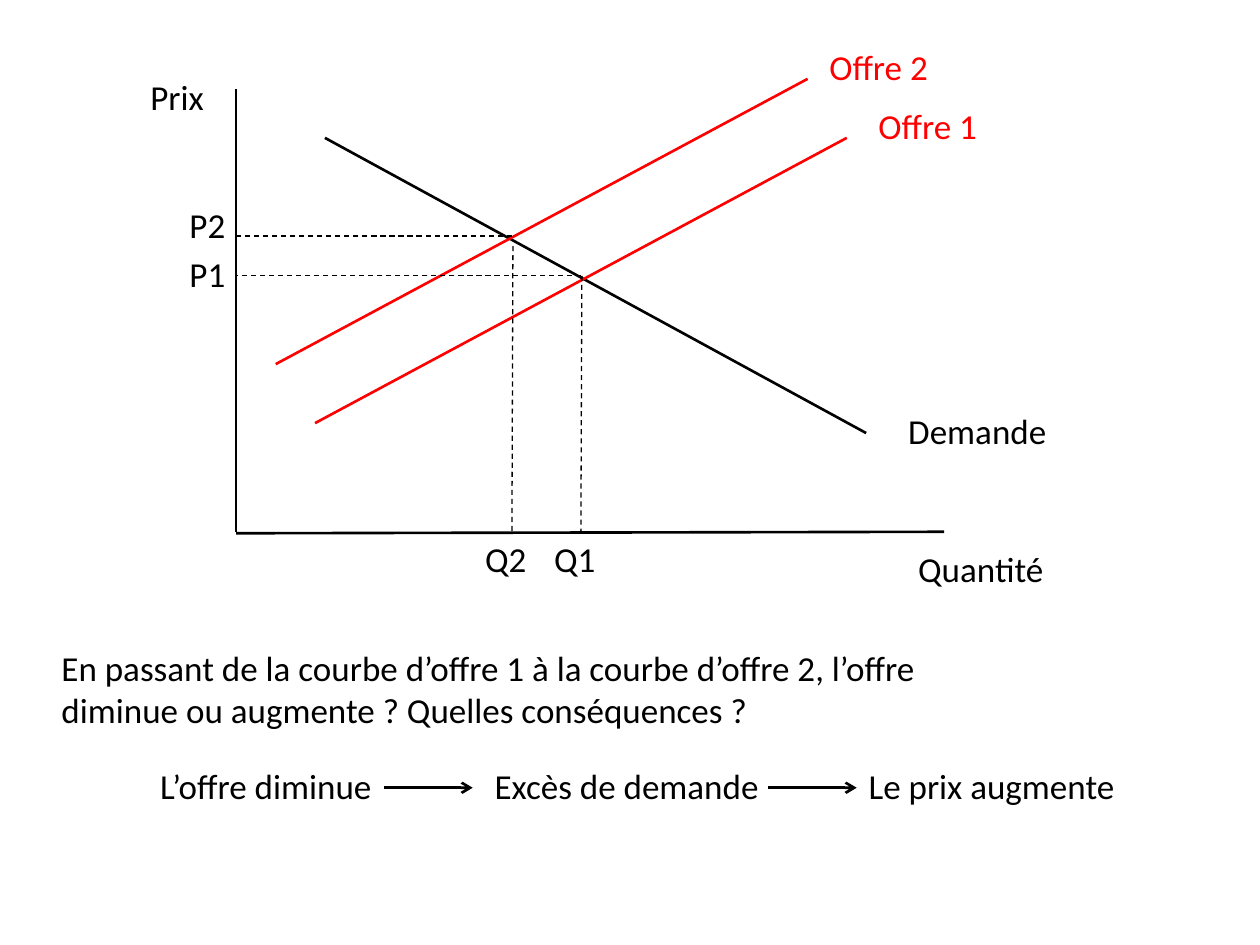
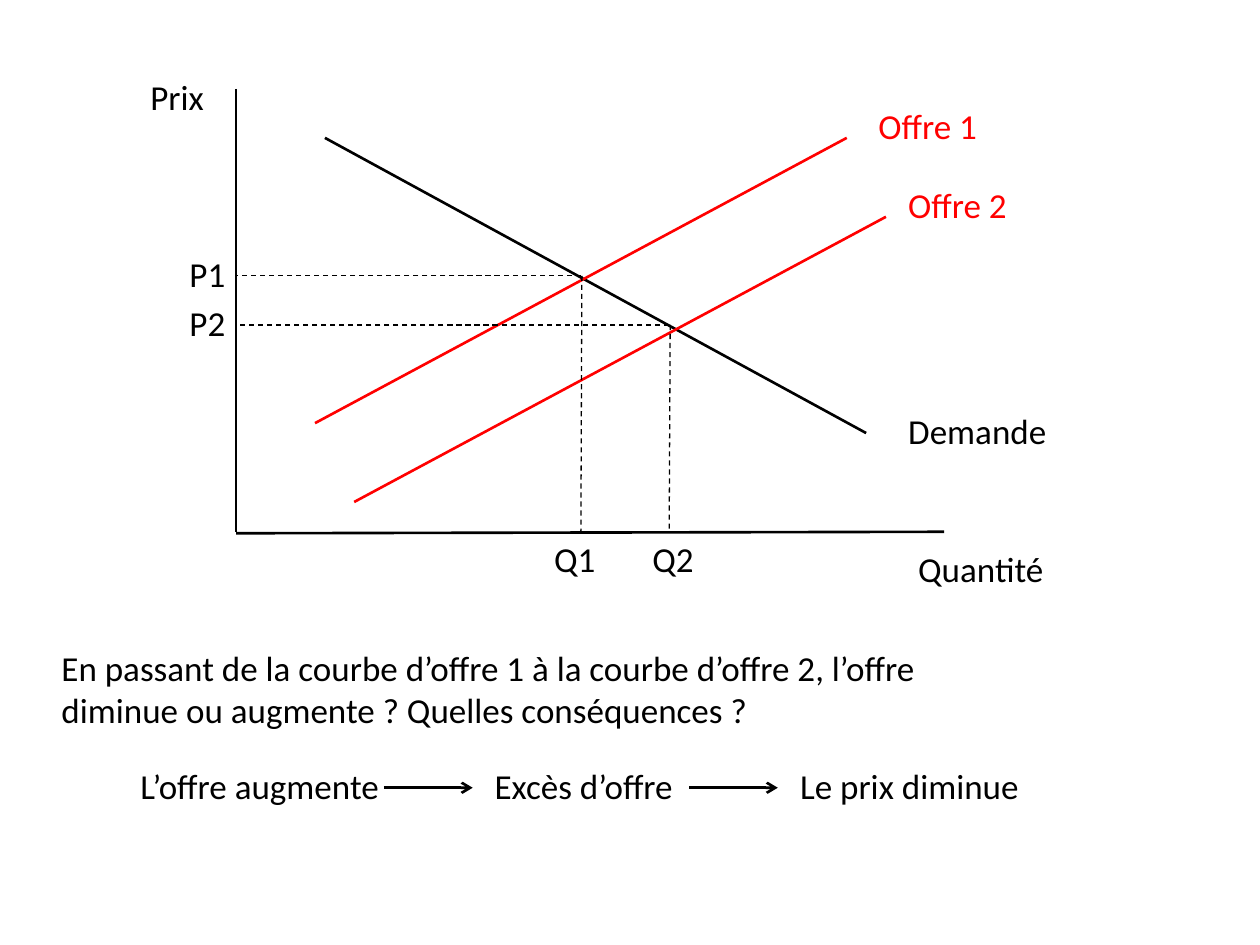
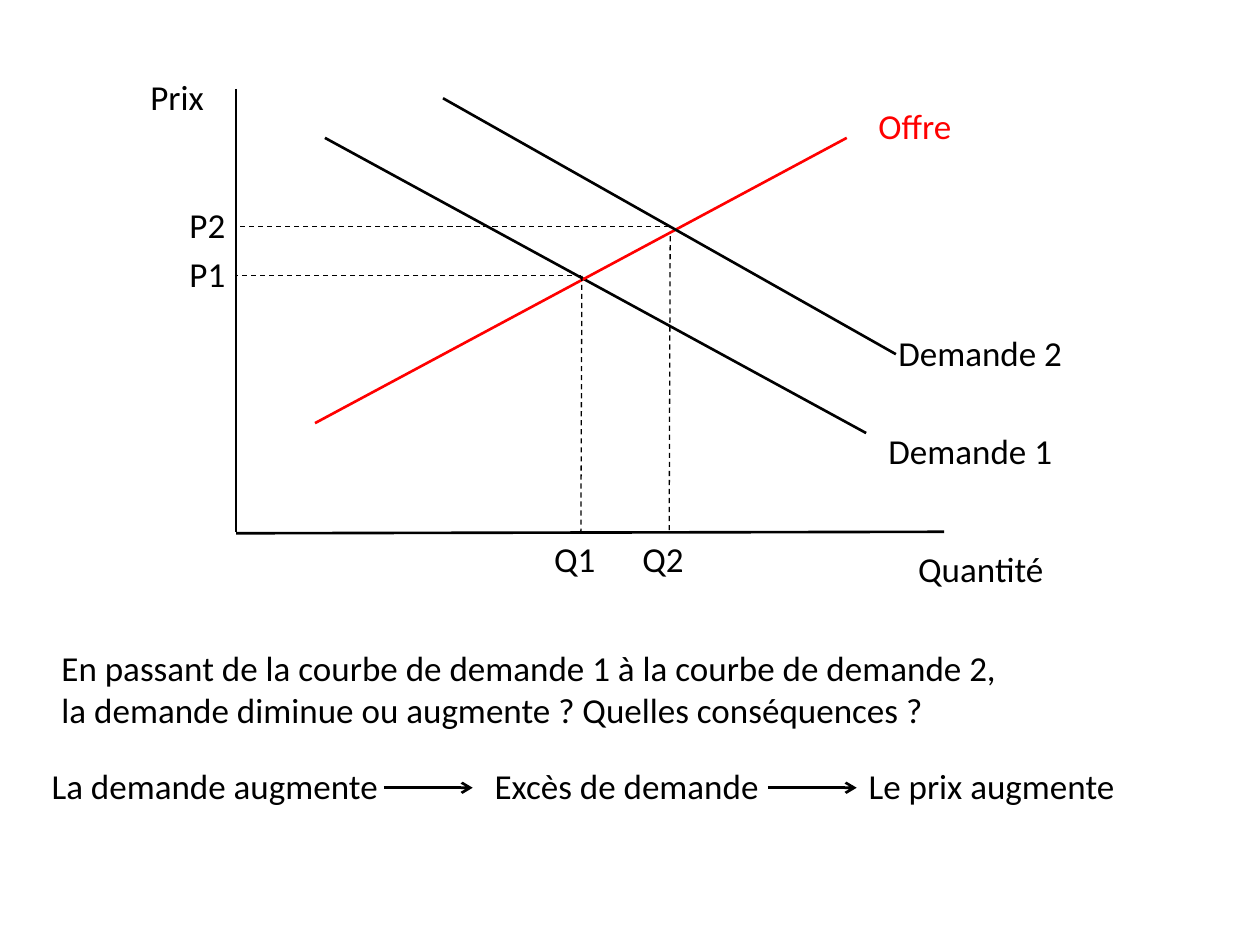
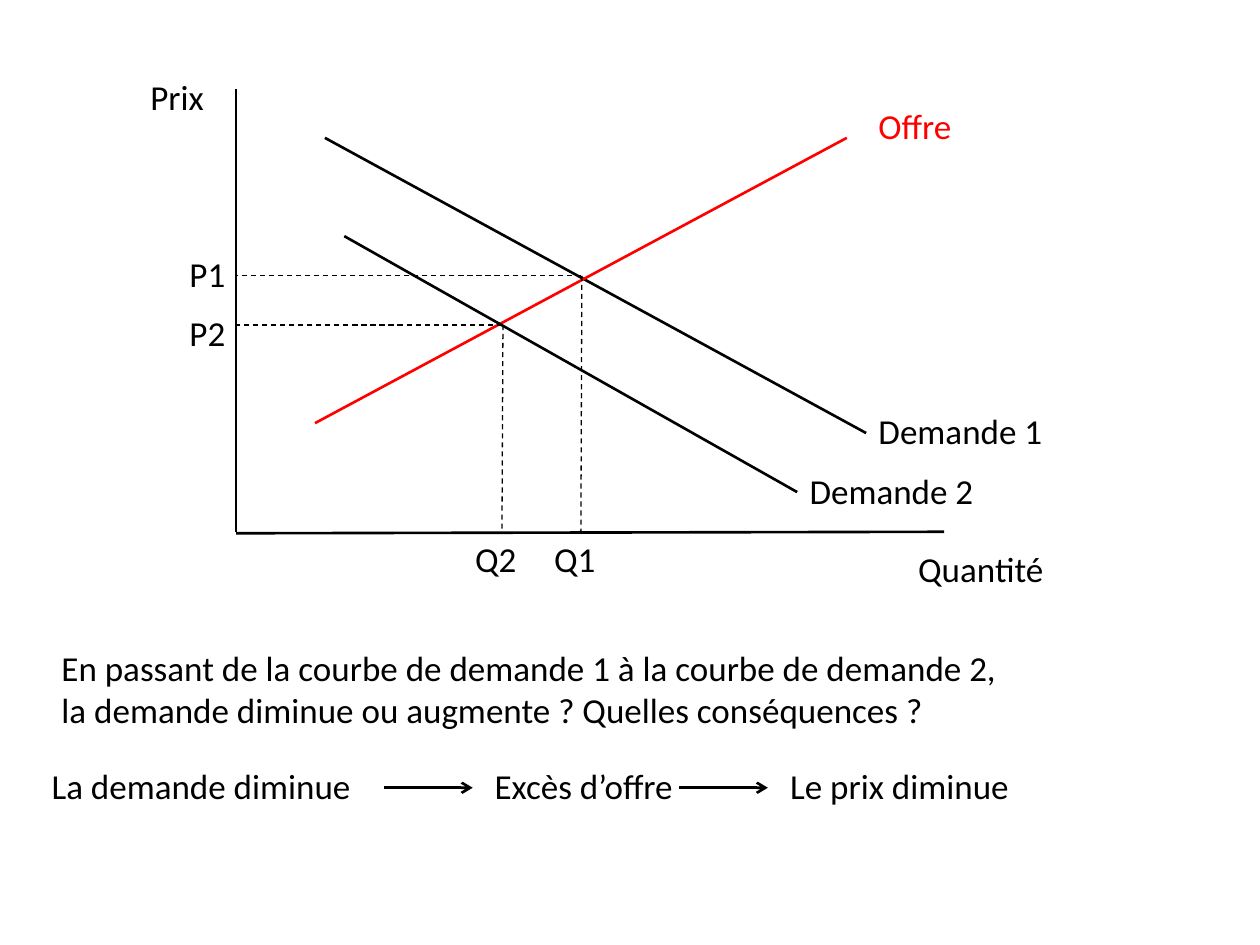
import pptx
import pptx.dml.color
import pptx.enum.dml
import pptx.enum.shapes
import pptx.enum.text
import pptx.oxml.ns
import pptx.util
from lxml import etree

Cm = pptx.util.Cm
COLORS = {"ink": "000000", "supply": "FF0000"}
FONT = "Calibri"
FONT_SIZE = 20
LINE_HEIGHT = 1.11
AXIS_LEFT = 4.76
AXIS_BOTTOM = 10.72
STEPS_TOP = 15.28
ARROW_TOP = 15.88
ARROW_LENGTH = 1.79

DEMAND = ((6.55, 2.78), (17.46, 8.73))
SUPPLY = ((6.35, 8.53), (17.07, 2.78))
SUPPLY_LABEL = (17.46, 1.98)
FIRST_BALANCE = {"point": (11.71, 5.56), "drop_top": 5.56, "price_top": 4.96, "quantity_left": 10.92}

SUPPLY_QUESTION = (
    "En passant de la courbe d’offre 1 à la courbe d’offre 2, "
    "l’offre diminue ou augmente ? Quelles conséquences ?"
)
DEMAND_QUESTION = (
    "En passant de la courbe de demande 1 à la courbe de demande 2, "
    "la demande diminue ou augmente ? Quelles conséquences ?"
)


def shift(curve, right, down):
    return tuple((left + right, top + down) for left, top in curve)


SCENARIOS = [
    {
        "curves": [
            ("Demande", "ink", DEMAND, (18.06, 8.14)),
            ("Offre 1", "supply", SUPPLY, SUPPLY_LABEL),
            ("Offre 2", "supply", shift(SUPPLY, -0.79, -1.19), (16.47, 0.79)),
        ],
        "balance": {"point": (10.32, 4.76), "drop_top": 4.96, "price_top": 3.97, "quantity_left": 9.53},
        "question": SUPPLY_QUESTION,
        "steps": [("L’offre diminue", 2.98, 5.36), ("Excès de demande", 9.72, 6.55), ("Le prix augmente", 17.26, 6.55)],
        "second_arrow": 15.48,
    },
    {
        "curves": [
            ("Demande", "ink", DEMAND, (18.06, 8.14)),
            ("Offre 1", "supply", SUPPLY, SUPPLY_LABEL),
            ("Offre 2", "supply", shift(SUPPLY, 0.79, 1.59), (18.06, 3.57)),
        ],
        "balance": {"point": (13.49, 6.55), "drop_top": 6.55, "price_top": 5.95, "quantity_left": 12.9},
        "question": SUPPLY_QUESTION,
        "steps": [("L’offre augmente", 2.58, 5.36), ("Excès d’offre", 9.72, 6.55), ("Le prix diminue", 15.88, 6.55)],
        "second_arrow": 13.89,
    },
    {
        "curves": [
            ("Demande 1", "ink", DEMAND, (17.66, 8.53)),
            ("Offre", "supply", SUPPLY, SUPPLY_LABEL),
            ("Demande 2", "ink", ((8.93, 1.98), (18.06, 7.14)), (17.86, 6.55)),
        ],
        "balance": {"point": (13.49, 4.57), "drop_top": 4.76, "price_top": 3.97, "quantity_left": 12.7},
        "question": DEMAND_QUESTION,
        "steps": [("La demande augmente", 0.79, 7.34), ("Excès de demande", 9.72, 6.55), ("Le prix augmente", 17.26, 6.55)],
        "second_arrow": 15.48,
    },
    {
        "curves": [
            ("Demande 1", "ink", DEMAND, (17.46, 8.14)),
            ("Offre", "supply", SUPPLY, SUPPLY_LABEL),
            ("Demande 2", "ink", ((6.94, 4.76), (16.07, 9.92)), (16.07, 9.33)),
        ],
        "balance": {"point": (10.12, 6.55), "drop_top": 6.55, "price_top": 6.15, "quantity_left": 9.33},
        "question": DEMAND_QUESTION,
        "steps": [("La demande diminue", 0.79, 7.34), ("Excès d’offre", 9.72, 6.55), ("Le prix diminue", 15.68, 6.55)],
        "second_arrow": 13.69,
    },
]
LABEL_WIDTHS = {"Offre": 2.38, "Offre 1": 3.77, "Offre 2": 3.77, "Demande": 3.77, "Demande 1": 4.37, "Demande 2": 4.17}


class MarketDeck:
    def __init__(self):
        self.presentation = pptx.Presentation()
        self.presentation.slide_width = Cm(25.4)
        self.presentation.slide_height = Cm(19.05)
        self.slide = None

    def new_slide(self):
        self.slide = self.presentation.slides.add_slide(self.presentation.slide_layouts[6])

    def text(self, content, left, top, width, height=LINE_HEIGHT, color="ink"):
        shape = self.slide.shapes.add_textbox(Cm(left), Cm(top), Cm(width), Cm(height))
        frame = shape.text_frame
        frame.word_wrap = True
        frame.auto_size = pptx.enum.text.MSO_AUTO_SIZE.SHAPE_TO_FIT_TEXT
        frame.text = content
        font = frame.paragraphs[0].runs[0].font
        font.name = FONT
        font.size = pptx.util.Pt(FONT_SIZE)
        font.color.rgb = pptx.dml.color.RGBColor.from_string(COLORS[color])

    def line(self, start, end, color="ink", weight=1.5, dashed=False, arrow=False):
        connector = self.slide.shapes.add_connector(
            pptx.enum.shapes.MSO_CONNECTOR.STRAIGHT, *(Cm(value) for value in (*start, *end))
        )
        connector.line.width = pptx.util.Pt(weight)
        connector.line.color.rgb = pptx.dml.color.RGBColor.from_string(COLORS[color])
        if dashed:
            connector.line.dash_style = pptx.enum.dml.MSO_LINE.DASH
        properties = connector._element.spPr
        if arrow:
            outline = properties.find(pptx.oxml.ns.qn("a:ln"))
            etree.SubElement(outline, pptx.oxml.ns.qn("a:tailEnd"), type="arrow")
        etree.SubElement(properties, pptx.oxml.ns.qn("a:effectLst"))

    def axes(self):
        self.line((AXIS_LEFT, 1.79), (AXIS_LEFT, AXIS_BOTTOM))
        self.line((19.03, AXIS_BOTTOM), (AXIS_LEFT, 10.75))
        self.text("Prix", 2.78, 1.39, 1.79)
        self.text("Quantité", 18.26, 10.92, 3.57)

    def curve(self, name, color, ends, label):
        self.line(*ends, color=color)
        self.text(name, *label, LABEL_WIDTHS[name], color=color)

    def balance(self, number, point, drop_top, price_top, quantity_left):
        left, top = point
        self.line(point, (AXIS_LEFT, top), weight=0.75, dashed=True)
        self.text(f"P{number}", 3.57, price_top, 1.79)
        self.line((left + 0.02, drop_top), (left, AXIS_BOTTOM), weight=0.75, dashed=True)
        self.text(f"Q{number}", quantity_left, AXIS_BOTTOM, 1.79)

    def reasoning(self, steps, second_arrow):
        for content, left, width in steps:
            self.text(content, left, STEPS_TOP, width)
        for left in (7.74, second_arrow):
            self.line((left, ARROW_TOP), (left + ARROW_LENGTH, ARROW_TOP), arrow=True)

    def scenario(self, curves, balance, question, steps, second_arrow):
        self.new_slide()
        self.axes()
        for curve in curves:
            self.curve(*curve)
        self.balance(1, **FIRST_BALANCE)
        self.balance(2, **balance)
        self.text(question, 0.99, 12.9, 19.84, 1.96)
        self.reasoning(steps, second_arrow)


def main():
    deck = MarketDeck()
    for scenario in SCENARIOS:
        deck.scenario(**scenario)
    deck.presentation.save("out.pptx")


if __name__ == "__main__":
    main()
